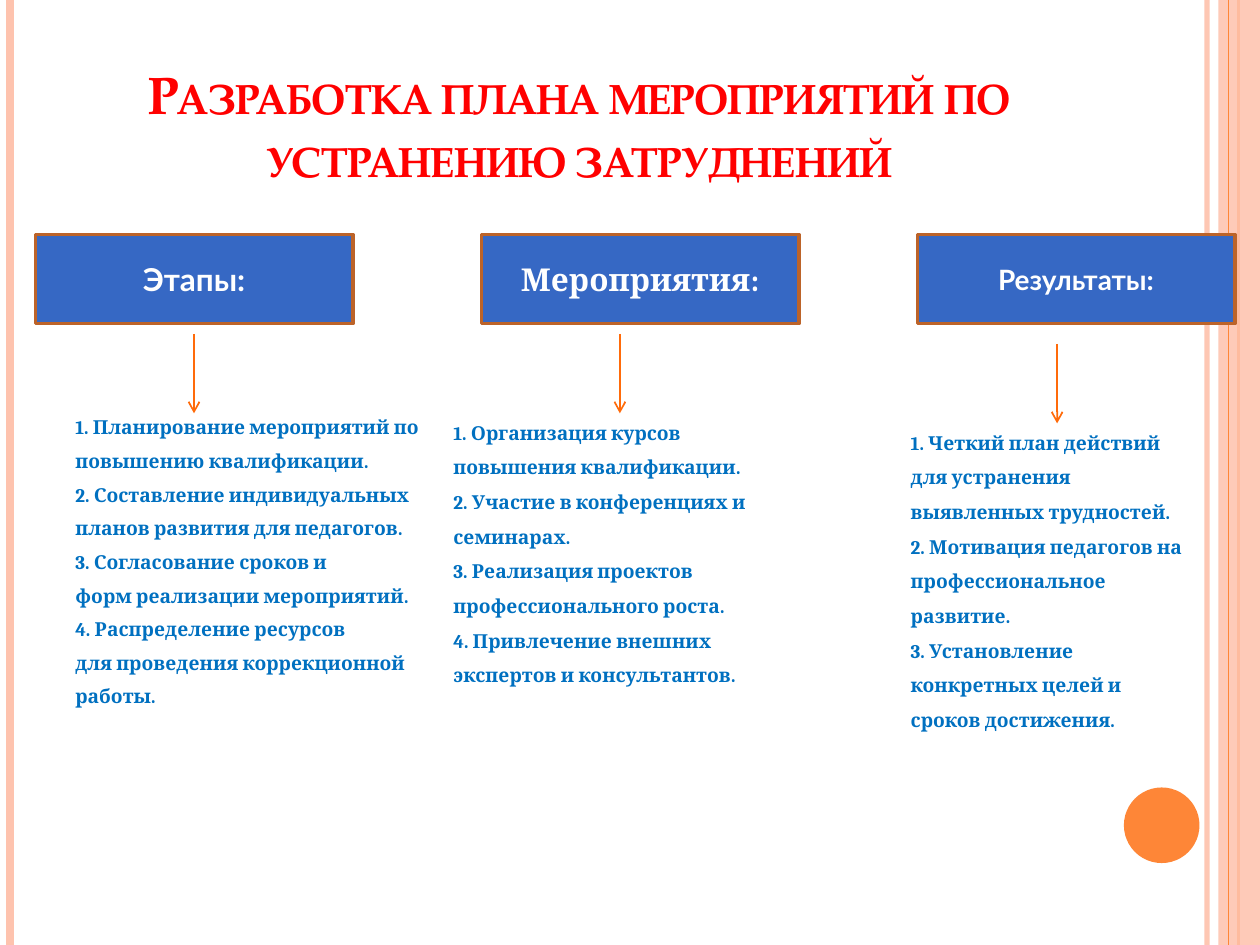
import pptx
import pptx.dml.color
import pptx.enum.shapes
import pptx.enum.text
import pptx.oxml.ns
import pptx.util
from lxml import etree

Inches, Pt = pptx.util.Inches, pptx.util.Pt
SHAPE = pptx.enum.shapes.MSO_SHAPE
ANCHOR = pptx.enum.text.MSO_ANCHOR
ALIGN = pptx.enum.text.PP_ALIGN
qn = pptx.oxml.ns.qn

COLORS = {"title": "FF0000", "header": "3668C4", "header_edge": "BC6329",
          "header_text": "FFFFFF", "body": "0070C0", "arrow": "FF6B0A",
          "stripe": "FEC3AE", "accent": "FE8637"}
WIDTH, HEIGHT = 10, 7.5
HEADER_TOP, HEADER_WIDTH, HEADER_HEIGHT = 1.86, 2.52, 0.71
ARROW_LENGTH = 0.63

TITLE = "Разработка плана мероприятий по устранению затруднений"
COLUMNS = [
    {"header": "Этапы:", "font": "Lato", "size": 18, "left": 0.28,
     "arrow": (1.54, 2.65), "list_box": (0.5, 3.25, 3, 2.5),
     "spacing": {"space_before": Pt(6)},
     "items": ["1. Планирование мероприятий по",
               "повышению квалификации.",
               "2. Составление индивидуальных",
               "планов развития для педагогов.",
               "3. Согласование сроков и",
               "форм реализации мероприятий.",
               "4. Распределение ресурсов",
               "для проведения коррекционной",
               "работы."]},
    {"header": "Мероприятия:", "font": "Cambria", "size": 18, "left": 3.82,
     "arrow": (4.92, 2.65), "list_box": (3.5, 3.2, 2.99, 2.57),
     "spacing": {"line_spacing": 1.5},
     "items": ["1. Организация курсов повышения квалификации.",
               "2. Участие в конференциях и семинарах.",
               "3. Реализация проектов профессионального роста.",
               "4. Привлечение внешних экспертов и консультантов."]},
    {"header": "Результаты:", "font": "Lato", "size": 16, "left": 7.28,
     "arrow": (8.39, 2.73), "list_box": (7.13, 3.28, 2.36, 2.57),
     "spacing": {"line_spacing": 1.5},
     "items": ["1. Четкий план действий для устранения выявленных трудностей.",
               "2. Мотивация педагогов на профессиональное развитие.",
               "3. Установление конкретных целей и сроков достижения."]},
]
# x, color, width in points, opacity in percent
LEFT_STRIPES = [(9.58, "stripe", 3, 93), (0.08, "stripe", 4.5, 100),
                (9.83, "accent", 1.5, 100)]
RIGHT_STRIPE = (9.75, "accent", 0.75, 100)


def rgb(name):
    return pptx.dml.color.RGBColor.from_string(COLORS[name])


def set_opacity(owner, percent):
    color = next(owner.iter(qn("a:srgbClr")))
    etree.SubElement(color, qn("a:alpha")).set("val", str(percent * 1000))


def add_line(slide, start, end, color, width, opacity=100, arrow=False):
    line = slide.shapes.add_connector(
        pptx.enum.shapes.MSO_CONNECTOR.STRAIGHT,
        *(Inches(v) for v in start + end))
    line.line.color.rgb = rgb(color)
    line.line.width = Pt(width)
    properties = line._element.spPr
    if opacity < 100:
        set_opacity(properties, opacity)
    if arrow:
        etree.SubElement(properties.find(qn("a:ln")), qn("a:tailEnd")).set("type", "arrow")
    etree.SubElement(properties, qn("a:effectLst"))


def add_filled(slide, kind, box, fill, edge=None):
    shape = slide.shapes.add_shape(kind, *(Inches(v) for v in box))
    shape.shadow.inherit = False
    shape.fill.solid()
    shape.fill.fore_color.rgb = rgb(fill)
    if edge:
        shape.line.color.rgb = rgb(edge)
        shape.line.width = Pt(2)
    else:
        shape.line.fill.background()
    return shape


def write(frame, texts, font, size, color, anchor, **paragraph_format):
    frame.word_wrap = True
    frame.vertical_anchor = anchor
    for index, text in enumerate(texts):
        paragraph = frame.paragraphs[0] if index == 0 else frame.add_paragraph()
        for name, value in paragraph_format.items():
            setattr(paragraph, name, value)
        run = paragraph.add_run()
        run.text = text
        for name, value in {"name": font, "size": Pt(size), "bold": True}.items():
            setattr(run.font, name, value)
        run.font.color.rgb = rgb(color)


def add_frame_decor(slide):
    for x, *style in LEFT_STRIPES:
        add_line(slide, (x, 0), (x, HEIGHT), *style)
    band = add_filled(slide, SHAPE.RECTANGLE, (9.67, 0, 0.33, HEIGHT), "stripe")
    set_opacity(band._element.spPr, 87)
    x, *style = RIGHT_STRIPE
    add_line(slide, (x, 0), (x, HEIGHT), *style)
    add_filled(slide, SHAPE.OVAL, (8.92, 6.25, 0.6, 0.6), "accent")


def add_title(slide):
    title = slide.shapes.title
    for name, value in {"left": 0.51, "top": 0.29, "width": 8.17, "height": 1.25}.items():
        setattr(title, name, Inches(value))
    write(title.text_frame, [TITLE], "TeX Gyre Pagella", 30, "title",
          ANCHOR.BOTTOM, alignment=ALIGN.CENTER)
    run = title.text_frame.paragraphs[0].runs[0]
    run._r.get_or_add_rPr().set("cap", "small")


def add_column(slide, column):
    header = add_filled(slide, SHAPE.RECTANGLE,
                        (column["left"], HEADER_TOP, HEADER_WIDTH, HEADER_HEIGHT),
                        "header", "header_edge")
    write(header.text_frame, [column["header"]], column["font"], column["size"],
          "header_text", ANCHOR.MIDDLE, alignment=ALIGN.CENTER)
    x, y = column["arrow"]
    add_line(slide, (x, y), (x, y + ARROW_LENGTH), "arrow", 1, arrow=True)
    steps = slide.shapes.add_textbox(*(Inches(v) for v in column["list_box"]))
    write(steps.text_frame, column["items"], "Cambria", 11, "body",
          ANCHOR.TOP, **column["spacing"])


def main():
    deck = pptx.Presentation()
    deck.slide_width, deck.slide_height = Inches(WIDTH), Inches(HEIGHT)
    slide = deck.slides.add_slide(deck.slide_layouts.get_by_name("Title Only"))
    add_frame_decor(slide)
    add_title(slide)
    for column in COLUMNS:
        add_column(slide, column)
    deck.save("out.pptx")


if __name__ == "__main__":
    main()
